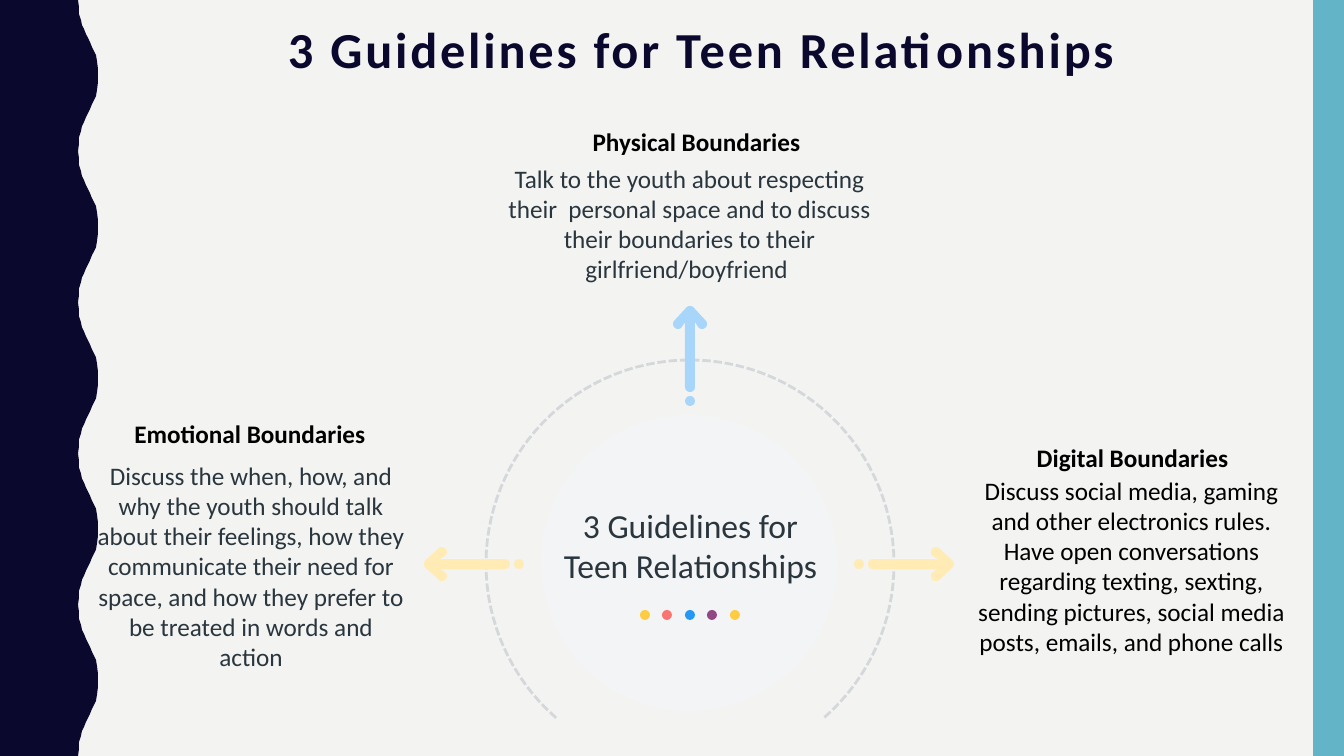
import math

import pptx
import pptx.dml.color
import pptx.enum.dml
import pptx.enum.shapes
import pptx.enum.text
import pptx.util

RGB = pptx.dml.color.RGBColor
PAPER = RGB(0xF3, 0xF3, 0xF2)
NAVY = RGB(0x0B, 0x08, 0x2E)
TEAL = RGB(0x62, 0xB4, 0xC6)
DISC = RGB(0xF3, 0xF4, 0xF5)
DASH = RGB(0xD5, 0xD8, 0xDA)
SLATE = RGB(0x2A, 0x36, 0x3E)
BLACK = RGB(0x00, 0x00, 0x00)
SKY = RGB(0xA8, 0xD6, 0xFB)
CREAM = RGB(0xFF, 0xEB, 0xB3)
YELLOW = RGB(0xFE, 0xCC, 0x42)
CORAL = RGB(0xFA, 0x75, 0x71)
BLUE = RGB(0x25, 0x98, 0xF5)
PLUM = RGB(0x92, 0x48, 0x83)

WIDTH, HEIGHT = 1344, 756
WAVES = 5
HALF_WAVE = [(78, 0), (79, 7), (79, 14), (81, 20), (82, 25), (84, 29),
             (86, 34), (88, 38), (90, 42), (92, 47), (94, 51), (96, 55),
             (97, 61), (98, 69), (98, 76)]

HEADINGS = [
    ("Emotional Boundaries", (93, 415, 314, 36)),
    ("Physical Boundaries", (578, 123, 237, 36)),
    ("Digital Boundaries", (1006, 439, 253, 36)),
]
BODIES = [
    ("Discuss the when, how, and why the youth should talk about their "
     "feelings, how they communicate their need for space, and how they "
     "prefer to be treated in words and action", (94, 457, 314, 220), SLATE),
    ("Talk to the youth about respecting their  personal space and to "
     "discuss their boundaries to their girlfriend/boyfriend ",
     (501, 160, 377, 128), SLATE),
    ("Discuss social media, gaming and other electronics rules. Have open "
     "conversations regarding texting, sexting, sending pictures, social "
     "media posts, emails, and phone calls", (975, 472, 313, 189), BLACK),
]
ARROWS = [
    ((690, 406), (0, -1), SKY),
    ((854, 564), (1, 0), CREAM),
    ((524, 564), (-1, 0), CREAM),
]


def emu(px):
    return pptx.util.Emu(round(px * 914400 / 100.8))


def arc(cx, cy, radius, start, end, steps=12):
    angles = [math.radians(start + (end - start) * i / steps)
              for i in range(steps + 1)]
    return [(cx + radius * math.cos(a), cy + radius * math.sin(a))
            for a in angles]


def wave_edge():
    period = HEIGHT / WAVES
    rising = [(x, period - y) for x, y in reversed(HALF_WAVE)]
    edge = [(x, y + i * period) for i in range(WAVES)
            for x, y in HALF_WAVE + rising]
    return [(0, 0)] + edge + [(0, HEIGHT)]


class Deck:
    font = "Calibri"

    def __init__(self):
        self.prs = pptx.Presentation()
        self.prs.slide_width = emu(WIDTH)
        self.prs.slide_height = emu(HEIGHT)
        self.s = self.prs.slides.add_slide(self.prs.slide_layouts[6])
        fill = self.s.background.fill
        fill.solid()
        fill.fore_color.rgb = PAPER

    def paint(self, sp, color):
        sp.shadow.inherit = False
        sp.fill.solid()
        sp.fill.fore_color.rgb = color
        sp.line.fill.background()

    def shape(self, kind, box, color):
        sp = self.s.shapes.add_shape(kind, *map(emu, box))
        self.paint(sp, color)

    def outline(self, contours, close=True):
        contours = [[(emu(x), emu(y)) for x, y in c] for c in contours]
        builder = self.s.shapes.build_freeform(*contours[0][0])
        builder.add_line_segments(contours[0][1:], close=close)
        for contour in contours[1:]:
            builder.move_to(*contour[0])
            builder.add_line_segments(contour[1:], close=close)
        return builder.convert_to_shape()

    def area(self, contours, color):
        self.paint(self.outline(contours), color)

    def dashed_curve(self, points, color):
        sp = self.outline([points], close=False)
        sp.shadow.inherit = False
        sp.fill.background()
        sp.line.color.rgb = color
        sp.line.width = pptx.util.Pt(2)
        sp.line.dash_style = pptx.enum.dml.MSO_LINE.SQUARE_DOT

    def arrow(self, start, direction, color):
        (x0, y0), (ux, uy) = start, direction
        body = (arc(19, 0, 5, 90, 270) + [(84, -5)]
                + arc(82, -12, 5, 135, 315) + arc(95, 0, 5, -45, 45)
                + arc(82, 12, 5, 45, 225) + [(84, 5)])
        dot = arc(5, 0, 5, 0, 360)
        self.area([[(x0 + x * ux - y * uy, y0 + x * uy + y * ux)
                    for x, y in part] for part in (body, dot)], color)

    def text(self, words, box, size, color, bold=False):
        sp = self.s.shapes.add_textbox(*map(emu, box))
        tf = sp.text_frame
        tf.word_wrap = True
        tf.auto_size = pptx.enum.text.MSO_AUTO_SIZE.SHAPE_TO_FIT_TEXT
        tf.margin_left = tf.margin_right = emu(3)
        tf.margin_top = tf.margin_bottom = emu(3)
        p = tf.paragraphs[0]
        p.alignment = pptx.enum.text.PP_ALIGN.CENTER
        r = p.add_run()
        r.text = words
        p.font.name = self.font
        p.font.size = pptx.util.Pt(size)
        p.font.bold = bold
        p.font.color.rgb = color
        return tf

    def title(self, words, box):
        tf = self.text(words, box, 36, NAVY, bold=True)
        tf.auto_size = pptx.enum.text.MSO_AUTO_SIZE.NONE
        tf.vertical_anchor = pptx.enum.text.MSO_ANCHOR.MIDDLE
        p = tf.paragraphs[0]
        p.line_spacing = 0.9
        p.runs[0].font._element.set("spc", "200")


def main():
    deck = Deck()
    rect = pptx.enum.shapes.MSO_SHAPE.RECTANGLE
    oval = pptx.enum.shapes.MSO_SHAPE.OVAL
    deck.area([wave_edge()], NAVY)
    deck.shape(rect, (1313, 0, 31, HEIGHT), TEAL)
    deck.title("3 Guidelines for Teen Relationships", (93, 0, 1217, 104))

    deck.shape(oval, (541, 415, 296, 296), DISC)
    deck.dashed_curve(arc(690, 564, 204, 131, 409, steps=90), DASH)
    deck.text("3 Guidelines for Teen Relationships",
              (549, 502, 283, 87), 24, SLATE)
    for i, color in enumerate([YELLOW, CORAL, BLUE, PLUM, YELLOW]):
        deck.shape(oval, (640 + 45 * i // 2, 610, 10, 10), color)

    for words, box in HEADINGS:
        deck.text(words, box, 18, BLACK, bold=True)
    for words, box, color in BODIES:
        deck.text(words, box, 18, color)
    for start, direction, color in ARROWS:
        deck.arrow(start, direction, color)
    deck.prs.save("out.pptx")


if __name__ == "__main__":
    main()
